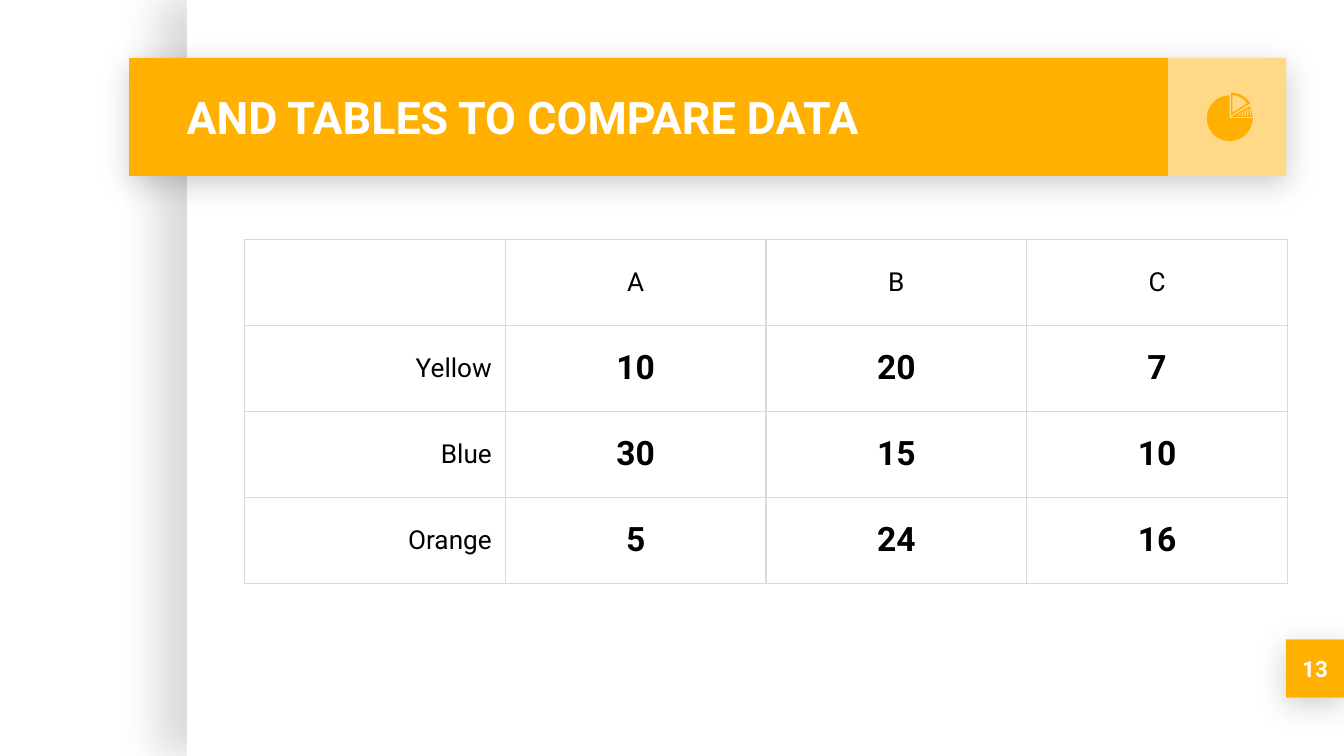
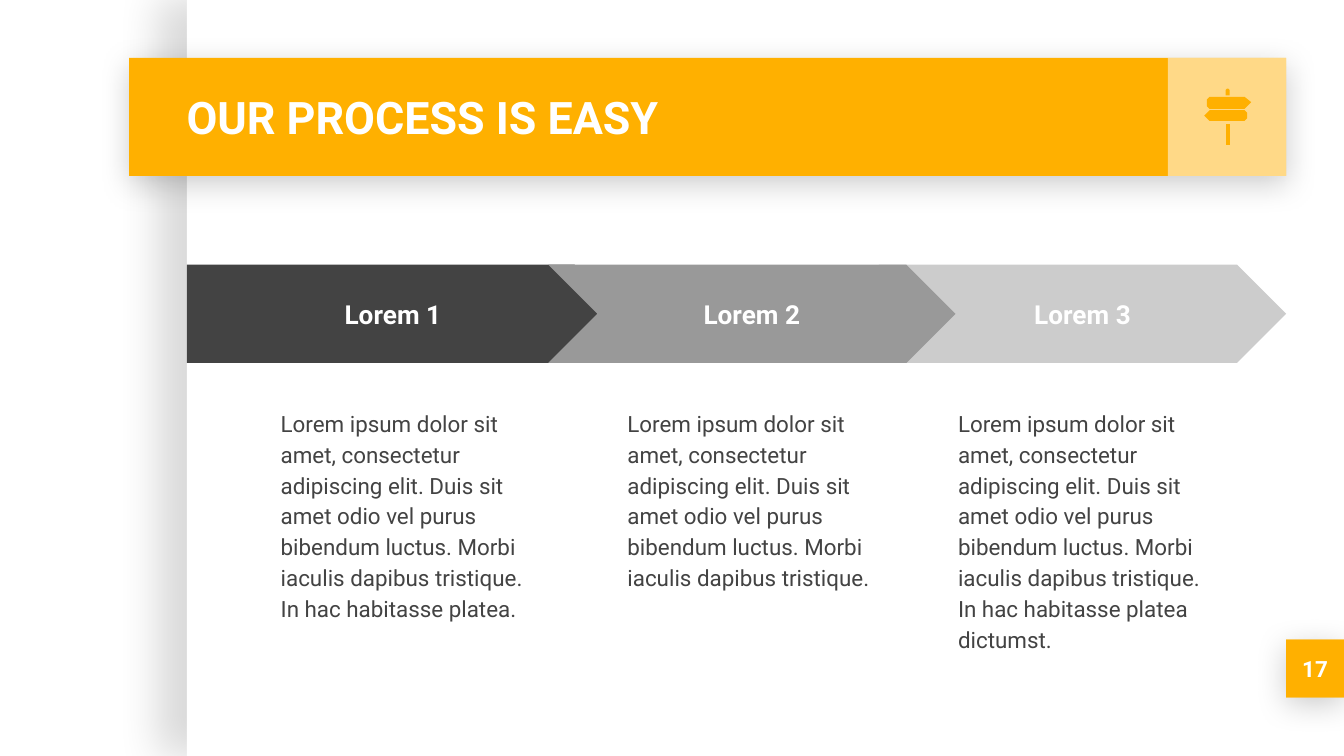
import math
from dataclasses import dataclass
from typing import Any

import lxml.etree
import pptx
import pptx.dml.color
import pptx.enum.shapes
import pptx.enum.text
import pptx.oxml.ns
import pptx.shapes.autoshape
import pptx.slide
import pptx.text.text
import pptx.util

Inches = pptx.util.Inches
Pt = pptx.util.Pt
qn = pptx.oxml.ns.qn
SHAPE = pptx.enum.shapes.MSO_SHAPE
ALIGN = pptx.enum.text.PP_ALIGN
ANCHOR = pptx.enum.text.MSO_ANCHOR

Point = tuple[float, float]
Outline = list[Point]


@dataclass(frozen=True)
class Theme:
    font: str = "Roboto"
    amber: str = "FFB000"
    white: str = "FFFFFF"
    black: str = "000000"
    dark: str = "434343"
    middle: str = "999999"
    light: str = "CCCCCC"
    grid: str = "D9D9D9"
    title_size: int = 24
    value_size: int = 18
    label_size: int = 14
    body_size: int = 12


@dataclass(frozen=True)
class Box:
    left: float
    top: float
    width: float
    height: float

    def lengths(self) -> list[int]:
        return [Inches(v) for v in (self.left, self.top, self.width, self.height)]


@dataclass(frozen=True)
class Shadow:
    opacity: int
    blur: float
    distance: float
    angle: int


@dataclass(frozen=True)
class Style:
    size: int
    color: str
    bold: bool = False
    align: Any = ALIGN.LEFT
    anchor: Any = ANCHOR.MIDDLE
    spacing: float = 1.0


@dataclass(frozen=True)
class Step:
    label: str
    outline: Any
    color: str
    left: float
    width: float
    indent: float
    body: str


THEME = Theme()
PAGE_SHADOW = Shadow(15, 22.5, 15, 180)
BAND_SHADOW = Shadow(20, 16.9, 3.8, 90)

SLIDE_WIDTH = 10
SLIDE_HEIGHT = SLIDE_WIDTH * 9 / 16
PAGE = Box(1.39, 0, 8.61, SLIDE_HEIGHT)
BAND = Box(0.96, 0.43, 8.61, 0.88)
ICON_TILE = Box(8.69, 0.43, 0.88, 0.88)
TITLE = Box(1.29, 0.43, 7.37, 0.88)
BADGE = Box(9.57, 4.76, 0.43, 0.43)

TITLE_STYLE = Style(THEME.title_size, THEME.white, True)
BADGE_STYLE = Style(THEME.body_size, THEME.white, True, ALIGN.CENTER)
STEP_STYLE = Style(THEME.label_size, THEME.white, True, ALIGN.CENTER)
BODY_STYLE = Style(THEME.body_size, THEME.dark, anchor=ANCHOR.TOP, spacing=1.15)
HEAD_STYLE = Style(THEME.label_size, THEME.black, align=ALIGN.CENTER)
NAME_STYLE = Style(THEME.label_size, THEME.black, align=ALIGN.RIGHT)
VALUE_STYLE = Style(THEME.value_size, THEME.black, True, ALIGN.CENTER)

COMPARISON = [
    ["", "A", "B", "C"],
    ["Yellow", "10", "20", "7"],
    ["Blue", "30", "15", "10"],
    ["Orange", "5", "24", "16"],
]
TABLE_LEFT, TABLE_TOP = 1.82, 1.78
COLUMN_WIDTH, ROW_HEIGHT = 1.94, 0.64

STEP_TOP, STEP_HEIGHT = 1.97, 0.73
BODY_TOP, BODY_WIDTH, BODY_HEIGHT = 2.92, 2.05, 2.1
STEP_PITCH, CHEVRON_LEFT, CHEVRON_WIDTH = 2.46, 4.08, 3.03
LOREM = (
    "Lorem ipsum dolor sit amet, consectetur adipiscing elit. Duis sit amet odio vel "
    "purus bibendum luctus. Morbi iaculis dapibus tristique."
)
STEPS = [
    Step("Lorem 3", SHAPE.CHEVRON, THEME.light, CHEVRON_LEFT + STEP_PITCH, CHEVRON_WIDTH,
         0.49, LOREM + " In hac habitasse platea dictumst."),
    Step("Lorem 1", SHAPE.PENTAGON, THEME.dark, PAGE.left, 3.25,
         0.6, LOREM + " In hac habitasse platea."),
    Step("Lorem 2", SHAPE.CHEVRON, THEME.middle, CHEVRON_LEFT, CHEVRON_WIDTH, 0.49, LOREM),
]


def rgb(value: str) -> pptx.dml.color.RGBColor:
    return pptx.dml.color.RGBColor.from_string(value)


def apply(target: Any, values: dict[str, Any]) -> None:
    for attribute, value in values.items():
        setattr(target, attribute, value)


def style_paragraph(paragraph: Any, text: str, style: Style) -> None:
    paragraph.text = text
    apply(paragraph, {"alignment": style.align, "line_spacing": style.spacing})
    apply(paragraph.font, {"name": THEME.font, "size": Pt(style.size), "bold": style.bold})
    paragraph.font.color.rgb = rgb(style.color)


def write(frame: pptx.text.text.TextFrame, text: str, style: Style) -> None:
    inset = Inches(0.1)
    apply(frame, {
        "word_wrap": True, "vertical_anchor": style.anchor,
        "margin_left": inset, "margin_right": inset,
        "margin_top": inset, "margin_bottom": inset,
    })
    style_paragraph(frame.paragraphs[0], text, style)


def paint(shape: pptx.shapes.autoshape.Shape, color: str) -> None:
    shape.shadow.inherit = False
    shape.fill.solid()
    shape.fill.fore_color.rgb = rgb(color)
    shape.line.fill.background()


def add_alpha(color: Any, percent: int) -> None:
    lxml.etree.SubElement(color, qn("a:alpha"), val=str(percent * 1000))


def cast_shadow(shape: pptx.shapes.autoshape.Shape, shadow: Shadow) -> None:
    effects = shape._element.spPr.find(qn("a:effectLst"))
    outer = lxml.etree.SubElement(
        effects, qn("a:outerShdw"), blurRad=str(Pt(shadow.blur)), dist=str(Pt(shadow.distance)),
        dir=str(shadow.angle * 60000), algn="bl", rotWithShape="0",
    )
    add_alpha(lxml.etree.SubElement(outer, qn("a:srgbClr"), val=THEME.black), shadow.opacity)


def add_block(slide: pptx.slide.Slide, box: Box, color: str,
              outline: Any = SHAPE.RECTANGLE) -> pptx.shapes.autoshape.Shape:
    block = slide.shapes.add_shape(outline, *box.lengths())
    paint(block, color)
    return block


def add_text(slide: pptx.slide.Slide, box: Box, text: str, style: Style) -> None:
    write(slide.shapes.add_textbox(*box.lengths()).text_frame, text, style)


def add_outlines(slide: pptx.slide.Slide, outlines: list[Outline]) -> None:
    builder = None
    for outline in outlines:
        points = [(Inches(x), Inches(y)) for x, y in outline]
        if builder is None:
            builder = slide.shapes.build_freeform(*points[0])
        else:
            builder.move_to(*points[0])
        builder.add_line_segments(points[1:], close=True)
    paint(builder.convert_to_shape(), THEME.amber)


def sector(center: Point, radius: float, start: int, end: int) -> Outline:
    angles = [math.radians(a) for a in range(start, end + 1, 3)]
    x, y = center
    return [center] + [(x + radius * math.cos(a), y + radius * math.sin(a)) for a in angles]


def draw_pie_icon(slide: pptx.slide.Slide) -> None:
    add_outlines(slide, [sector((9.15, 0.88), 0.17, 0, 270)])
    stripes = []
    for index in range(6):
        left = 9.2 + 0.02 * index
        right = left + 0.01
        tops = [0.88 - 0.57 * (x - 9.16) for x in (left, right)]
        stripes.append([(left, tops[0]), (right, tops[1]), (right, 0.86), (left, 0.86)])
    add_outlines(slide, [sector((9.16, 0.87), 0.16, -30, 0)] + stripes)
    add_outlines(slide, [sector((9.16, 0.86), 0.17, -90, -33),
                         sector((9.17, 0.84), 0.13, -90, -33)])


def draw_signpost_icon(slide: pptx.slide.Slide) -> None:
    signs = [
        [(9, 0.72), (9.26, 0.72), (9.31, 0.76), (9.26, 0.81), (9, 0.81),
         (8.98, 0.79), (8.98, 0.74)],
        [(9, 0.82), (9.26, 0.82), (9.28, 0.84), (9.28, 0.88), (9.26, 0.9),
         (9, 0.9), (8.96, 0.86)],
        [(9.13, 0.66), (9.14, 0.66), (9.15, 0.67), (9.15, 0.71), (9.12, 0.71), (9.12, 0.67)],
        [(9.12, 0.92), (9.15, 0.92), (9.15, 1.08), (9.12, 1.08)],
    ]
    for sign in signs:
        add_outlines(slide, [sign])


def add_page(deck: Any, title: str, number: int) -> pptx.slide.Slide:
    slide = deck.slides.add_slide(deck.slide_layouts[6])
    cast_shadow(add_block(slide, PAGE, THEME.white), PAGE_SHADOW)
    cast_shadow(add_block(slide, BADGE, THEME.amber), BAND_SHADOW)
    cast_shadow(add_block(slide, BAND, THEME.amber), BAND_SHADOW)
    tile = add_block(slide, ICON_TILE, THEME.white)
    add_alpha(tile._element.spPr.find(qn("a:solidFill"))[0], 53)
    add_text(slide, TITLE, title, TITLE_STYLE)
    write(add_block(slide, BADGE, THEME.amber).text_frame, str(number), BADGE_STYLE)
    return slide


def border_cell(cell: Any) -> None:
    properties = cell._tc.get_or_add_tcPr()
    for side in ("a:lnL", "a:lnR", "a:lnT", "a:lnB"):
        border = lxml.etree.SubElement(properties, qn(side), w=str(Pt(0.75)))
        fill = lxml.etree.SubElement(border, qn("a:solidFill"))
        lxml.etree.SubElement(fill, qn("a:srgbClr"), val=THEME.grid)


def add_comparison(slide: pptx.slide.Slide) -> None:
    rows, columns = len(COMPARISON), len(COMPARISON[0])
    box = Box(TABLE_LEFT, TABLE_TOP, columns * COLUMN_WIDTH, rows * ROW_HEIGHT)
    table = slide.shapes.add_table(rows, columns, *box.lengths()).table
    apply(table, {"first_row": False, "horz_banding": False})
    for column in table.columns:
        column.width = Inches(COLUMN_WIDTH)
    for r, row in enumerate(COMPARISON):
        table.rows[r].height = Inches(ROW_HEIGHT)
        for c, text in enumerate(row):
            cell = table.cell(r, c)
            border_cell(cell)
            cell.fill.background()
            apply(cell, {
                "vertical_anchor": ANCHOR.MIDDLE,
                "margin_left": Inches(0.1), "margin_right": Inches(0.1),
                "margin_top": Inches(0.07), "margin_bottom": Inches(0.07),
            })
            style = HEAD_STYLE if r == 0 else NAME_STYLE if c == 0 else VALUE_STYLE
            style_paragraph(cell.text_frame.paragraphs[0], text, style)


def add_step(slide: pptx.slide.Slide, step: Step) -> None:
    box = Box(step.left, STEP_TOP, step.width, STEP_HEIGHT)
    arrow = add_block(slide, box, step.color, step.outline)
    arrow.adjustments[0] = 0.5
    write(arrow.text_frame, step.label, STEP_STYLE)
    body = Box(step.left + step.indent, BODY_TOP, BODY_WIDTH, BODY_HEIGHT)
    add_text(slide, body, step.body, BODY_STYLE)


def main() -> None:
    deck = pptx.Presentation()
    apply(deck, {"slide_width": Inches(SLIDE_WIDTH), "slide_height": Inches(SLIDE_HEIGHT)})

    tables = add_page(deck, "AND TABLES TO COMPARE DATA", 13)
    add_comparison(tables)
    draw_pie_icon(tables)

    process = add_page(deck, "OUR PROCESS IS EASY", 17)
    draw_signpost_icon(process)
    for step in STEPS:
        add_step(process, step)

    deck.save("out.pptx")


if __name__ == "__main__":
    main()
